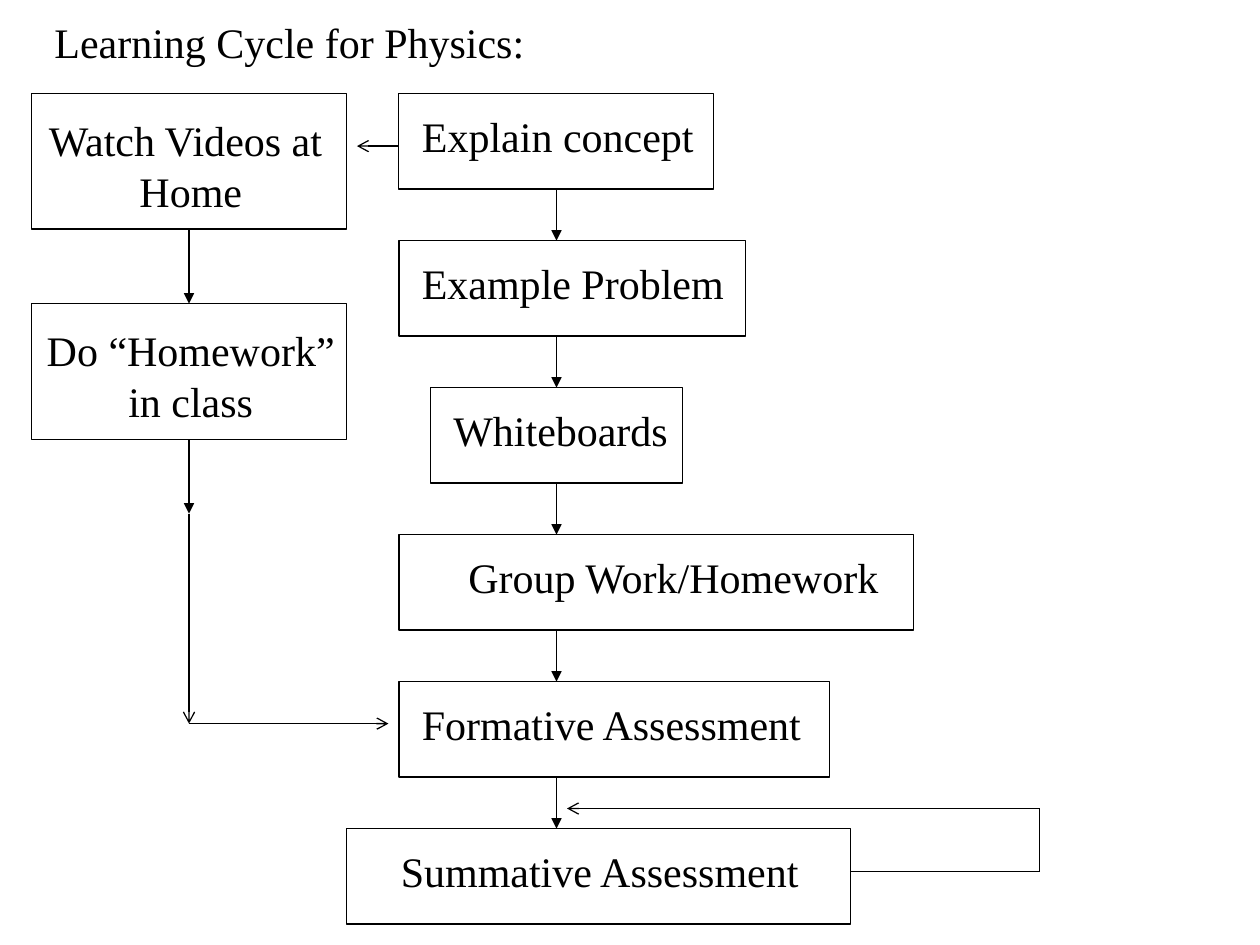
from lxml.etree import SubElement
from pptx import Presentation
from pptx.dml.color import RGBColor
from pptx.enum.shapes import MSO_CONNECTOR, MSO_SHAPE
from pptx.enum.text import MSO_AUTO_SIZE, PP_ALIGN
from pptx.oxml.ns import qn
from pptx.util import Pt

BLACK = RGBColor(0x00, 0x00, 0x00)
LINE_WIDTH = Pt(0.75)

prs = Presentation()
prs.slide_width, prs.slide_height = Pt(720), Pt(540)
s = prs.slides.add_slide(prs.slide_layouts[6])


def add_label(lines, left, top, width, align=PP_ALIGN.LEFT):
    tb = s.shapes.add_textbox(Pt(left), Pt(top), Pt(width), Pt(7.2 + 29 * len(lines)))
    tf = tb.text_frame
    tf.word_wrap = False
    tf.auto_size = MSO_AUTO_SIZE.SHAPE_TO_FIT_TEXT
    tf.text = "\n".join(lines)
    for p in tf.paragraphs:
        p.alignment = align
        p.font.name = "Times New Roman"
        p.font.size = Pt(24)
        p.font.color.rgb = BLACK


def add_line(x1, y1, x2, y2, head=None):
    """Draw a straight line; head names the arrowhead at its end."""
    c = s.shapes.add_connector(MSO_CONNECTOR.STRAIGHT, Pt(x1), Pt(y1), Pt(x2), Pt(y2))
    c.line.color.rgb = BLACK
    c.line.width = LINE_WIDTH
    props = c._element.spPr
    if head:
        SubElement(props.find(qn("a:ln")), qn("a:tailEnd"), type=head)
    SubElement(props, qn("a:effectLst"))


TOP = 53.5
STEP_PITCH, STEP_HEIGHT, STEP_X = 84, 54.5, 318
HOME_PITCH, HOME_HEIGHT, HOME_X = 120, 77.5, 108

# text, box left, box width, label left, label width
steps = [
    ("Explain concept", 227.75, 180, 234, 171),
    ("Example Problem", 228, 198, 234, 188.5),
    ("Whiteboards", 246, 144, 252, 138),
    ("Group Work/Homework", 228, 294, 260.5, 251),
    ("Formative Assessment", 228, 246, 234, 231.5),
    ("Summative Assessment", 198, 288, 222, 244),
]
# lines, label left, label width
home_steps = [
    (["Watch Videos at ", "Home"], 20, 178),
    (["Do “Homework”", "in class"], 18.75, 180.5),
]

boxes = [(left, TOP + i * STEP_PITCH, width, STEP_HEIGHT)
         for i, (_, left, width, _, _) in enumerate(steps)]
boxes += [(18, TOP + i * HOME_PITCH, 180, HOME_HEIGHT) for i in range(len(home_steps))]
for box in boxes:
    sp = s.shapes.add_shape(MSO_SHAPE.RECTANGLE, *(Pt(v) for v in box))
    sp.shadow.inherit = False
    sp.fill.background()
    sp.line.color.rgb = BLACK
    sp.line.width = LINE_WIDTH

add_label(["Learning Cycle for Physics:"], 24, 6, 286)

for i, (text, _, _, left, width) in enumerate(steps):
    top = TOP + i * STEP_PITCH
    add_label([text], left, top + 6, width)
    if i < len(steps) - 1:
        add_line(STEP_X, top + STEP_HEIGHT, STEP_X, top + STEP_PITCH, "triangle")

for i, (lines, left, width) in enumerate(home_steps):
    top = TOP + i * HOME_PITCH
    add_label(lines, left, top + 8.5, width, PP_ALIGN.CENTER)
    add_line(HOME_X, top + HOME_HEIGHT, HOME_X, top + HOME_PITCH, "triangle")

# Links between the two columns
add_line(228, 83.5, 204, 83.5, "arrow")
add_line(HOME_X, TOP + len(home_steps) * HOME_PITCH, HOME_X, 413.5, "arrow")
add_line(HOME_X, 413.5, 222, 413.5, "arrow")

# Loop back from the summative assessment
add_line(486, 498, 594, 498)
add_line(594, 498, 594, 462)
add_line(594, 462, 324, 462, "arrow")

prs.save("out.pptx")
